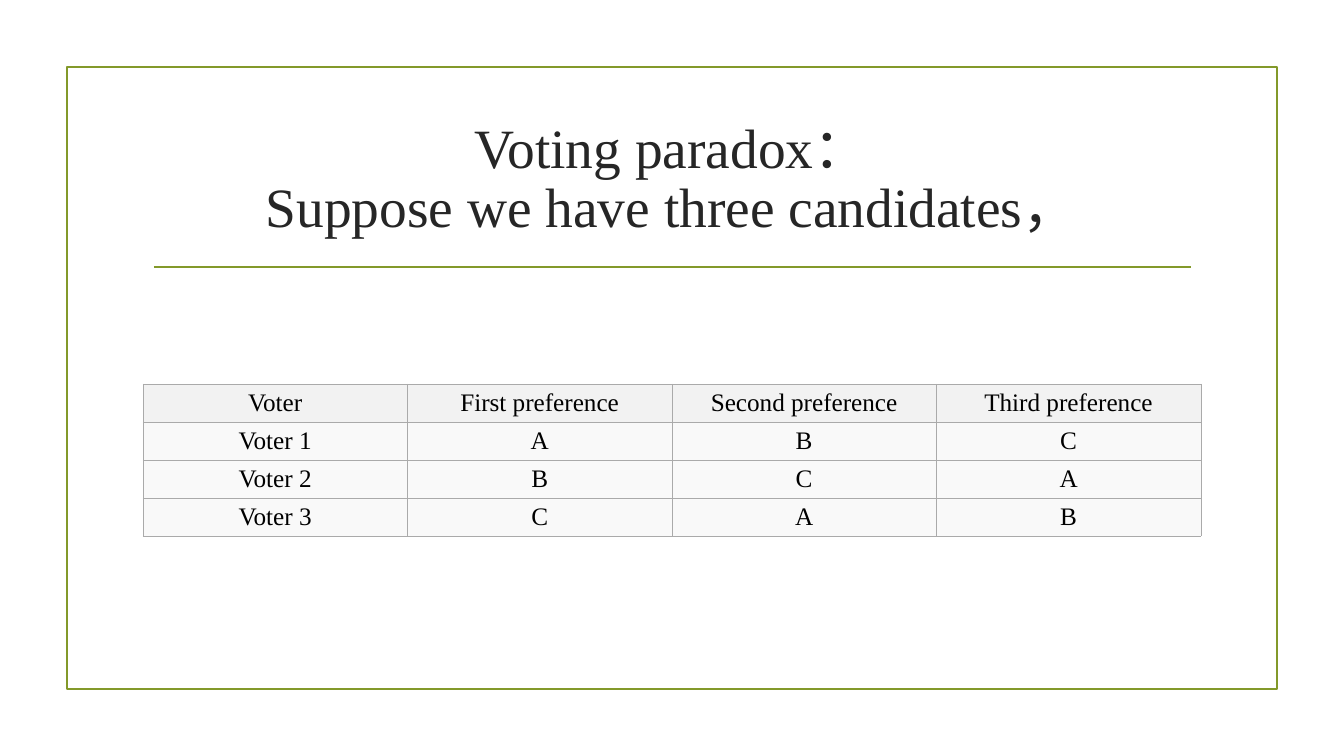
import pptx
import pptx.util
import pptx.dml.color
import pptx.enum.shapes
import pptx.enum.text
import pptx.oxml
import pptx.oxml.ns
import lxml.etree

RGBColor = pptx.dml.color.RGBColor
OLIVE = RGBColor(0x83, 0x99, 0x2A)
CHARCOAL = RGBColor(0x26, 0x26, 0x26)
BLACK = RGBColor(0, 0, 0)
HEADER_GRAY = RGBColor(0xF2, 0xF2, 0xF2)
BODY_GRAY = RGBColor(0xF9, 0xF9, 0xF9)
BORDER_GRAY = RGBColor(0xAA, 0xAA, 0xAA)

EMU_PER_PX = 914400 / 100.8
PREFERENCES = [
    ["Voter", "First preference", "Second preference", "Third preference"],
    ["Voter 1", "A", "B", "C"],
    ["Voter 2", "B", "C", "A"],
    ["Voter 3", "C", "A", "B"],
]


def px(*lengths):
    return [pptx.util.Emu(round(length * EMU_PER_PX)) for length in lengths]


def apply_format(target, values):
    for name, value in values.items():
        setattr(target, name, value)


class SlideBuilder:
    font_name = "Times New Roman"
    line_width = pptx.util.Pt(1.25)
    border_width = pptx.util.Pt(0.38)

    def __init__(self, slide):
        self.slide = slide

    def style_line(self, line, color):
        line.color.rgb = color
        line.width = self.line_width

    def style_text(self, paragraph, size, color, spacing=1.0):
        apply_format(paragraph, {
            "alignment": pptx.enum.text.PP_ALIGN.CENTER,
            "line_spacing": spacing,
        })
        apply_format(paragraph.font, {
            "name": self.font_name,
            "size": pptx.util.Pt(size),
        })
        paragraph.font.color.rgb = color

    def frame(self, left, top, width, height, color):
        shape = self.slide.shapes.add_shape(
            pptx.enum.shapes.MSO_SHAPE.RECTANGLE, *px(left, top, width, height))
        shape.shadow.inherit = False
        shape.fill.background()
        self.style_line(shape.line, color)

    def rule(self, left, right, y, color):
        connector = self.slide.shapes.add_connector(
            pptx.enum.shapes.MSO_CONNECTOR.STRAIGHT, *px(left, y, right, y))
        self.style_line(connector.line, color)
        lxml.etree.SubElement(
            connector.element.spPr, pptx.oxml.ns.qn("a:effectLst"))

    def title(self, text, left, top, width, height, size, color):
        shape = self.slide.shapes.add_textbox(*px(left, top, width, height))
        text_frame = shape.text_frame
        apply_format(text_frame, {
            "word_wrap": True,
            "vertical_anchor": pptx.enum.text.MSO_ANCHOR.MIDDLE,
        })
        paragraph = text_frame.paragraphs[0]
        paragraph.text = text
        self.style_text(paragraph, size, color, 0.9)
        for run in paragraph.runs:
            apply_format(run.font, {
                "name": self.font_name, "size": pptx.util.Pt(size)})
            run.font.color.rgb = color

    def border(self, cell, color):
        properties = cell._tc.get_or_add_tcPr()
        for position, side in enumerate(("lnL", "lnR", "lnT", "lnB")):
            properties.insert(position, pptx.oxml.parse_xml(
                f'<a:{side} {pptx.oxml.ns.nsdecls("a")} w="{self.border_width}">'
                f'<a:solidFill><a:srgbClr val="{color}"/></a:solidFill></a:{side}>'))

    def table(self, rows, left, top, width, row_height, size):
        table = self.slide.shapes.add_table(
            len(rows), len(rows[0]),
            *px(left, top, width, row_height * len(rows))).table
        margin = px(3)[0]
        for row_index, row in enumerate(rows):
            for column_index, text in enumerate(row):
                cell = table.cell(row_index, column_index)
                apply_format(cell, {
                    "text": text,
                    "vertical_anchor": pptx.enum.text.MSO_ANCHOR.MIDDLE,
                    "margin_top": margin,
                    "margin_bottom": margin,
                })
                cell.fill.solid()
                cell.fill.fore_color.rgb = BODY_GRAY if row_index else HEADER_GRAY
                paragraph = cell.text_frame.paragraphs[0]
                self.style_text(paragraph, size, BLACK)
                paragraph.font.bold = False
                self.border(cell, BORDER_GRAY)


def main():
    presentation = pptx.Presentation()
    apply_format(presentation, dict(zip(("slide_width", "slide_height"), px(1344, 756))))
    slide = presentation.slides.add_slide(presentation.slide_layouts[6])
    builder = SlideBuilder(slide)
    builder.frame(67, 67, 1210, 622, OLIVE)
    builder.rule(154, 1191, 267, OLIVE)
    builder.title("Voting paradox：\vSuppose we have three candidates，",
                  143, 108, 1058, 144, 39.6, CHARCOAL)
    builder.table(PREFERENCES, 143, 384, 1058, 38, 18)
    presentation.save("out.pptx")


if __name__ == "__main__":
    main()
